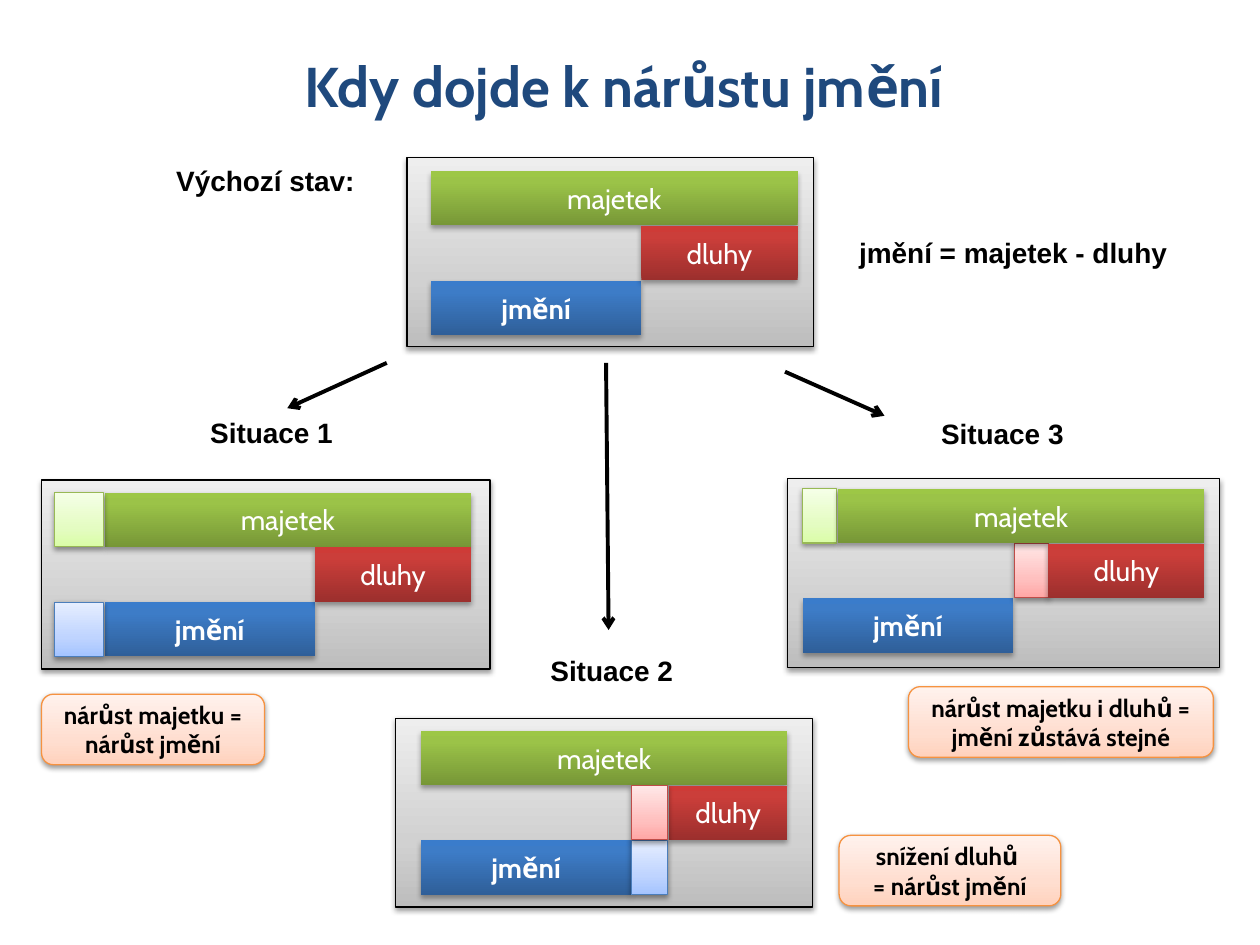
from pptx import Presentation
from pptx.util import Inches, Pt
from pptx.dml.color import RGBColor
from pptx.enum.shapes import MSO_SHAPE, MSO_CONNECTOR
from pptx.enum.text import PP_ALIGN, MSO_ANCHOR, MSO_AUTO_SIZE
from pptx.oxml.ns import qn
from lxml.etree import SubElement

NAVY = RGBColor(0x1F, 0x49, 0x7D)
BLACK = RGBColor(0, 0, 0)
WHITE = RGBColor(0xFF, 0xFF, 0xFF)
LIME = RGBColor(0x98, 0xB9, 0x55)
ROSE = RGBColor(0xBF, 0x4C, 0x48)
SKY = RGBColor(0x4B, 0x7E, 0xBC)
ORANGE = RGBColor(0xF6, 0x92, 0x40)


def ramp(mid, *hues):
    return list(zip((0, mid, 100), map(RGBColor.from_string, hues)))


# Look of each part: gradient stops, outline
LOOKS = {
    "panel": (ramp(35, "BDBDBD", "D1D1D1", "EEEEEE"), BLACK),
    "note": (ramp(35, "FFD2BD", "FFDED0", "FFF2ED"), ORANGE),
    "majetek": (ramp(80, "779737", "9BC348", "9DC746"), None),
    "dluhy": (ramp(80, "9C2F2D", "CB3E3A", "CE3B37"), None),
    "jmění": (ramp(80, "2F5F99", "3D7CC7", "3A7CCB"), None),
    "majetek+": (ramp(35, "DAFDA7", "E4FCC2", "F5FFE7"), LIME),
    "dluhy+": (ramp(35, "FFA6A5", "FFC0BF", "FFE7E7"), ROSE),
    "jmění+": (ramp(35, "A4C4FF", "BFD4FF", "E6EEFF"), SKY),
}

# Bars: a row for each kind, all of one height
ROWS = ("majetek", "dluhy", "jmění")
BAR, STEP = 0.43, 0.435
ASSET, DEBT = 2.91, 1.24
NET = ASSET - DEBT

# Panel frame, bar origin, bars as (kind, offset, width)
STATES = [
    ((3.23, 1.25, 3.23, 1.5), (3.42, 1.36),
     [("majetek", 0, ASSET), ("jmění", 0, NET), ("dluhy", NET, DEBT)]),
    ((0.33, 3.81, 3.56, 1.5), (0.83, 3.91),
     [("majetek", 0, ASSET), ("jmění", 0, NET), ("dluhy", NET, DEBT),
      ("majetek+", -0.4, 0.39), ("jmění+", -0.4, 0.39)]),
    ((3.14, 5.7, 3.31, 1.5), (3.34, 5.8),
     [("majetek", 0, ASSET), ("jmění", 0, NET), ("dluhy", NET + 0.3, DEBT - 0.3),
      ("jmění+", NET, 0.29), ("dluhy+", NET, 0.29)]),
    ((6.25, 3.8, 3.43, 1.5), (6.65, 3.88),
     [("majetek+", -0.28, 0.27), ("jmění", -0.28, NET), ("dluhy+", NET - 0.27, 0.27),
      ("majetek", 0, ASSET), ("dluhy", NET, DEBT)]),
]
ARROWS = [((3.07, 2.88), (2.28, 3.24)), ((4.81, 2.88), (4.83, 5)),
          ((6.23, 2.95), (7.02, 3.3))]
TITLE = ("Kdy dojde k nárůstu jmění", (1.61, 0.36, 6.69, 0.64))
LABELS = [
    ("Výchozí stav:", (1.3, 1.25, 1.89, 0.37), PP_ALIGN.LEFT),
    ("Situace 1", (1.21, 3.25, 1.89, 0.37), PP_ALIGN.CENTER),
    ("Situace 2", (3.91, 5.14, 1.89, 0.37), PP_ALIGN.CENTER),
    ("Situace 3", (7.01, 3.26, 1.89, 0.37), PP_ALIGN.CENTER),
    ("jmění = majetek - dluhy", (6.72, 1.82, 2.91, 0.37), PP_ALIGN.LEFT),
]
NOTES = [
    (["nárůst majetku = nárůst jmění"], (0.33, 5.51, 1.77, 0.56)),
    (["snížení dluhů ", "= nárůst jmění"], (6.66, 6.63, 1.76, 0.56)),
    (["nárůst majetku i dluhů = jmění zůstává stejné"], (7.21, 5.45, 2.42, 0.56)),
]

deck = Presentation()
deck.slide_width, deck.slide_height = Inches(10), Inches(7.5)
slide = deck.slides.add_slide(deck.slide_layouts[6])
shapes = slide.shapes


def write(shape, lines, size, font, hue, bold=True, align=PP_ALIGN.CENTER):
    frame = shape.text_frame
    frame.word_wrap = True
    para = frame.paragraphs[0]
    para.alignment = align
    for i, line in enumerate(lines):
        if i:
            para.add_line_break()
        run = para.add_run()
        run.text = line
        run.font.size, run.font.name, run.font.bold = Pt(size), font, bold
        run.font.color.rgb = hue


def block(look, box, form=MSO_SHAPE.RECTANGLE):
    stops, edge = LOOKS[look]
    shape = shapes.add_shape(form, *map(Inches, box))
    # Gradient running upwards
    shape.fill.gradient()
    shape.fill.gradient_angle = 90
    props = shape.element.spPr
    group = props.find(qn("a:gradFill")).find(qn("a:gsLst"))
    for old in list(group):
        group.remove(old)
    for spot, hue in stops:
        stop = SubElement(group, qn("a:gs"), pos=str(spot * 1000))
        SubElement(stop, qn("a:srgbClr"), val=str(hue))
    # Outline
    if edge is None:
        shape.line.fill.background()
    else:
        shape.line.color.rgb = edge
        shape.line.width = Pt(0.75)
    # Soft shadow below
    shape.shadow.inherit = False
    drop, dark = (1.8, 35) if edge is None else (1.6, 38)
    cast = SubElement(props.find(qn("a:effectLst")), qn("a:outerShdw"),
                      blurRad=str(Pt(3.1)), dist=str(Pt(drop)),
                      dir="5400000", rotWithShape="0")
    tint = SubElement(cast, qn("a:srgbClr"), val=str(BLACK))
    SubElement(tint, qn("a:alpha"), val=str(dark * 1000))
    shape.text_frame.vertical_anchor = MSO_ANCHOR.MIDDLE
    return shape


def label(text, box, size, font, hue, align):
    shape = shapes.add_textbox(*map(Inches, box))
    write(shape, [text], size, font, hue, align=align)
    shape.text_frame.auto_size = MSO_AUTO_SIZE.SHAPE_TO_FIT_TEXT


# Panels with their bars
for frame, (left, top), bars in STATES:
    block("panel", frame)
    for kind, shift, width in bars:
        name = kind.rstrip("+")
        bar = block(kind, (left + shift, top + ROWS.index(name) * STEP, width, BAR))
        if kind == name:
            write(bar, [name], 16, "Cabin", WHITE, bold=name == "jmění")

# Arrows from the first state to the three cases
for start, end in ARROWS:
    arrow = shapes.add_connector(MSO_CONNECTOR.STRAIGHT, *map(Inches, start + end))
    arrow.line.color.rgb = BLACK
    arrow.line.width = Pt(2.25)
    SubElement(arrow.line._get_or_add_ln(), qn("a:tailEnd"), type="arrow")
    SubElement(arrow.element.spPr, qn("a:effectLst"))

# Title, labels and notes
label(*TITLE, 32, "Cabin", NAVY, PP_ALIGN.CENTER)
for text, box, align in LABELS:
    label(text, box, 16, "Arial", BLACK, align)
for lines, box in NOTES:
    write(block("note", box, MSO_SHAPE.ROUNDED_RECTANGLE), lines, 14, "Cabin", BLACK)

deck.save("out.pptx")
